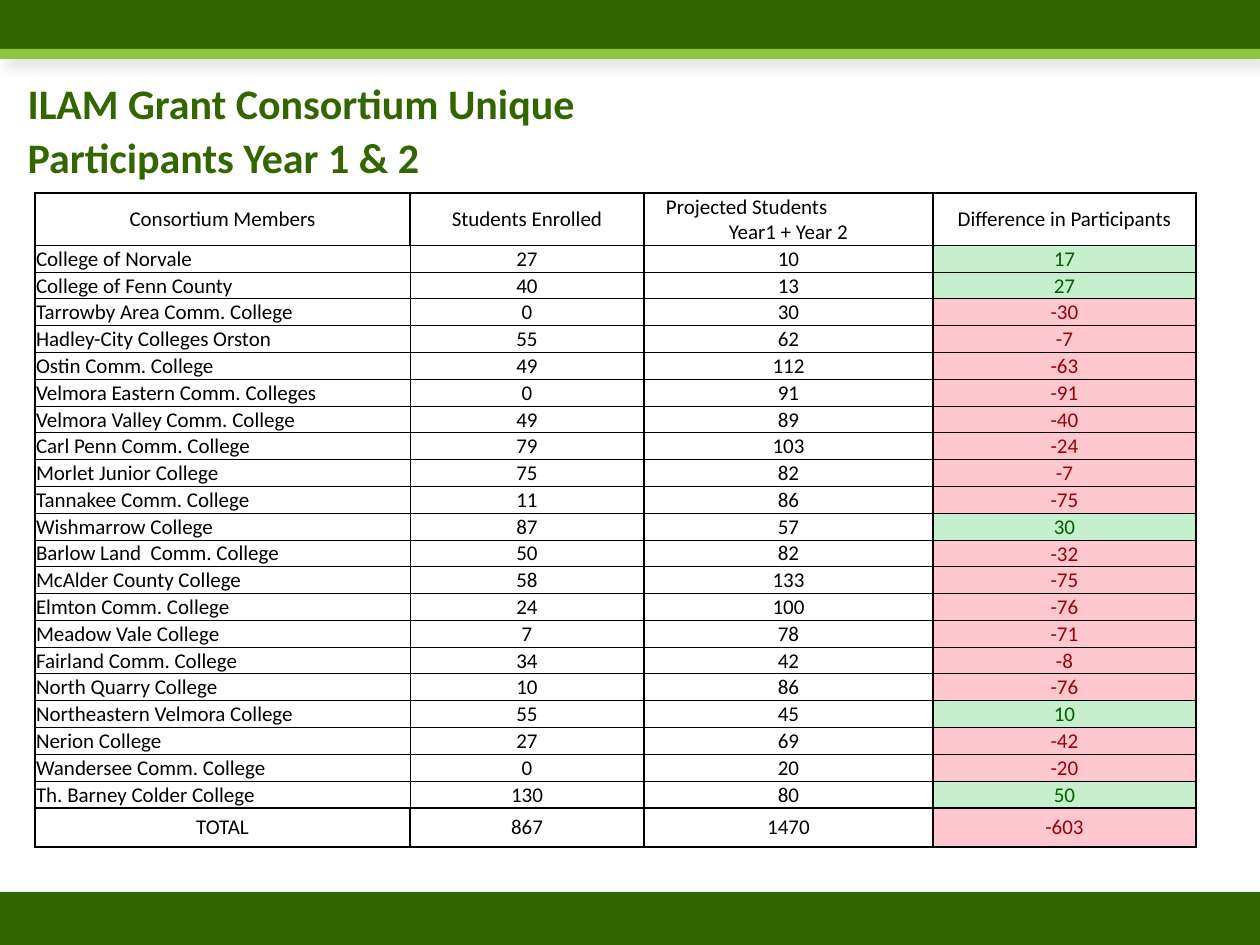
from lxml import etree
from pptx import Presentation
from pptx.dml.color import RGBColor
from pptx.enum.shapes import MSO_SHAPE as SHAPE
from pptx.enum.text import MSO_ANCHOR as ANCHOR, MSO_AUTO_SIZE as AUTO, PP_ALIGN as ALIGN
from pptx.oxml.ns import qn
from pptx.util import Pt

# Content
TITLE = "ILAM Grant Consortium Unique Participants Year 1 & 2"
HEADERS = ["Consortium Members", "Students Enrolled",
           "Projected Students\nYear1 + Year 2", "Difference in Participants"]
MEMBERS = [  # name, enrolled, projected
    ("College of Norvale", 27, 10),
    ("College of Fenn County", 40, 13),
    ("Tarrowby Area Comm. College", 0, 30),
    ("Hadley-City Colleges Orston", 55, 62),
    ("Ostin Comm. College", 49, 112),
    ("Velmora Eastern Comm. Colleges", 0, 91),
    ("Velmora Valley Comm. College", 49, 89),
    ("Carl Penn Comm. College", 79, 103),
    ("Morlet Junior College", 75, 82),
    ("Tannakee Comm. College", 11, 86),
    ("Wishmarrow College", 87, 57),
    ("Barlow Land  Comm. College", 50, 82),
    ("McAlder County College", 58, 133),
    ("Elmton Comm. College", 24, 100),
    ("Meadow Vale College", 7, 78),
    ("Fairland Comm. College", 34, 42),
    ("North Quarry College", 10, 86),
    ("Northeastern Velmora College", 55, 45),
    ("Nerion College", 27, 69),
    ("Wandersee Comm. College", 0, 20),
    ("Th. Barney Colder College", 130, 80),
]
TOTAL = ("TOTAL", sum(m[1] for m in MEMBERS), sum(m[2] for m in MEMBERS))

COLORS = {"dark": "336600", "light": "8DC63F", "black": "000000",
          "gain": "006100", "gain_bg": "C6EFCE",
          "loss": "9C0006", "loss_bg": "FFC7CE"}
FONT = "Calibri"

# Layout in px, 126 to the inch
W, H = 1260, 945
BARS = [(0, 53, "dark"), (49, 10, "light"), (892, 53, "dark")]  # top, height, colour
TITLE_BOX = (15, 67, 584, 122)
TABLE_AT = (35, 193)
COLS = [375, 234, 289, 263]
HEAD_H, BODY_H, TOTAL_H = 51, 563, 39


def px(n):
    return n * 914400 // 126


def rgb(name):
    return RGBColor.from_string(COLORS[name])


def write(tf, text, size=12, color="black", bold=False, align=ALIGN.CENTER, spacing=None):
    tf.word_wrap = True
    for i, line in enumerate(text.split("\n")):
        p = tf.paragraphs[0] if i == 0 else tf.add_paragraph()
        p.alignment = align
        p.line_spacing = spacing
        r = p.add_run()
        r.text = line
        r.font.name, r.font.size, r.font.bold = FONT, Pt(size), bold
        r.font.color.rgb = rgb(color)


def add_shadow(sp):
    effects = sp._element.spPr.find(qn("a:effectLst"))
    shadow = etree.SubElement(effects, qn("a:outerShdw"), blurRad=str(Pt(8)), dist=str(Pt(5)),
                              dir=str(45 * 60000), algn="tl", rotWithShape="0")
    color = etree.SubElement(shadow, qn("a:srgbClr"), val=COLORS["black"])
    etree.SubElement(color, qn("a:alpha"), val="15000")


def set_borders(cell, widths):
    pr = cell._tc.get_or_add_tcPr()
    for i, (side, width) in enumerate(zip("LRTB", widths)):
        ln = etree.Element(qn(f"a:ln{side}"), w=str(Pt(width)))
        fill = etree.SubElement(ln, qn("a:solidFill"))
        etree.SubElement(fill, qn("a:srgbClr"), val=COLORS["black"])
        pr.insert(i, ln)


prs = Presentation()
prs.slide_width, prs.slide_height = px(W), px(H)
s = prs.slides.add_slide(prs.slide_layouts[5])

# Bars
for top, height, color in BARS:
    sp = s.shapes.add_shape(SHAPE.RECTANGLE, 0, px(top), px(W), px(height))
    sp.shadow.inherit = False
    sp.fill.solid()
    sp.fill.fore_color.rgb = rgb(color)
    sp.line.fill.background()
    if color == "light":
        add_shadow(sp)

# Title
title = s.shapes.title
title.left, title.top, title.width, title.height = map(px, TITLE_BOX)
tf = title.text_frame
tf.auto_size = AUTO.NONE
tf.vertical_anchor = ANCHOR.TOP
write(tf, TITLE, size=24, color="dark", bold=True, align=ALIGN.LEFT, spacing=Pt(31))

# Table
rows = [HEADERS] + [(*m, m[1] - m[2]) for m in [*MEMBERS, TOTAL]]
last = len(rows) - 1
frame = s.shapes.add_table(len(rows), len(COLS), *map(px, TABLE_AT), px(sum(COLS)),
                           px(HEAD_H + BODY_H + TOTAL_H))
table = frame.table
table.first_row = table.horz_banding = False
for col, width in zip(table.columns, COLS):
    col.width = px(width)
heights = [px(HEAD_H)] + [px(BODY_H) // len(MEMBERS)] * len(MEMBERS) + [px(TOTAL_H)]

for i, values in enumerate(rows):
    table.rows[i].height = heights[i]
    body = 0 < i < last
    for j, value in enumerate(values):
        cell = table.cell(i, j)
        cell.margin_left = cell.margin_right = cell.margin_top = px(1)
        cell.margin_bottom = 0
        cell.vertical_anchor = ANCHOR.BOTTOM if body and j == 3 else ANCHOR.MIDDLE
        color = "black"
        if i and j == 3:
            color = "gain" if value > 0 else "loss"
            cell.fill.solid()
            cell.fill.fore_color.rgb = rgb(color + "_bg")
        else:
            cell.fill.background()
        write(cell.text_frame, str(value), color=color,
              align=ALIGN.LEFT if body and j == 0 else ALIGN.CENTER)
        # Thin lines between members and after their names
        set_borders(cell, (0.5 if body and j == 1 else 1,
                           0.5 if body and j == 0 else 1,
                           0.5 if 1 < i < last else 1,
                           0.5 if 0 < i < last - 1 else 1))

# First line of the projected header sits left of centre
p = table.cell(0, 2).text_frame.paragraphs[0]
p.alignment = ALIGN.LEFT
p._p.get_or_add_pPr().set("marL", str(px(21)))

prs.save("out.pptx")
